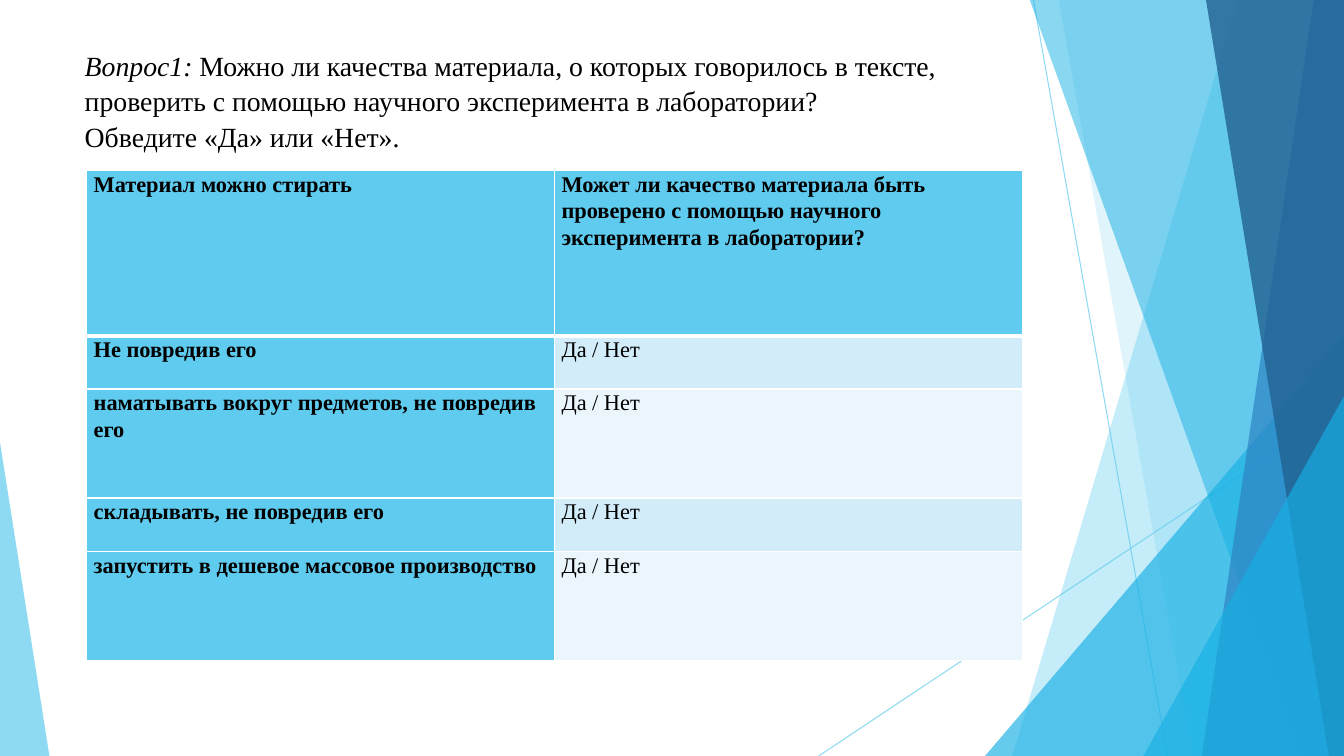
from lxml.etree import SubElement
from pptx import Presentation
from pptx.dml.color import RGBColor
from pptx.enum.shapes import MSO_CONNECTOR as Connector, MSO_SHAPE as Shape
from pptx.enum.text import MSO_ANCHOR as Anchor, MSO_AUTO_SIZE as AutoSize, PP_ALIGN as Align
from pptx.oxml.ns import qn
from pptx.util import Inches, Pt

WHITE = RGBColor(0xFF, 0xFF, 0xFF)
BLACK = RGBColor(0, 0, 0)
SKY = RGBColor(0x5F, 0xCB, 0xEF)
CYAN = RGBColor(0x17, 0xB0, 0xE4)
BLUE = RGBColor(0x2E, 0x83, 0xC3)
NAVY = RGBColor(0x22, 0x62, 0x92)
BAND_DARK = RGBColor(0xD2, 0xEC, 0xF9)
BAND_LIGHT = RGBColor(0xEA, 0xF6, 0xFC)
FONT = "Times New Roman"
WIDTH, HEIGHT = 13.33, 7.5

ANSWER = "Да / Нет"
HEADER = ("Материал можно стирать",
          "Может ли качество материала быть проверено с помощью научного "
          "эксперимента в лаборатории?")
QUALITIES = ("Не повредив его",
             "наматывать вокруг предметов, не повредив его",
             "складывать, не повредив его",
             "запустить в дешевое массовое производство")
ROW_HEIGHTS = (1.64, 0.53, 1.08, 0.53, 1.08)


def add_text(paragraph, text, size=16, bold=False, italic=False, color=BLACK):
    paragraph.alignment = Align.LEFT
    paragraph.line_spacing = 1.07
    paragraph.space_before = Pt(0)
    paragraph.space_after = Pt(8)
    for index, line in enumerate(text.split("\n")):
        if index:
            paragraph.add_line_break()
        run = paragraph.add_run()
        run.text = line
        font = run.font
        font.name, font.size = FONT, Pt(size)
        font.bold, font.italic = bold, italic
        font.color.rgb = color


def set_opacity(fill_or_line, percent):
    color = fill_or_line._xPr.find(qn("a:solidFill"))[0]
    SubElement(color, qn("a:alpha"), val=str(percent * 1000))


def paint(facet, color, opacity):
    facet.shadow.inherit = False
    facet.fill.solid()
    facet.fill.fore_color.rgb = color
    set_opacity(facet.fill, opacity)
    facet.line.fill.background()


def add_ray(slide, start, end):
    ray = slide.shapes.add_connector(Connector.STRAIGHT, *map(Inches, start + end))
    ray.line.width = Pt(0.75)
    ray.line.color.rgb = SKY
    set_opacity(ray.line.fill, 70)
    SubElement(ray._element.spPr, qn("a:effectLst"))


def add_band(slide, top_x, bottom_x, color, opacity):
    """Facet between a slanted left edge and the right side of the slide."""
    top = -0.01
    outline = slide.shapes.build_freeform(Inches(top_x), Inches(top), scale=1.0)
    corners = ((WIDTH, top), (WIDTH, HEIGHT), (bottom_x, HEIGHT))
    outline.add_line_segments([(Inches(x), Inches(y)) for x, y in corners])
    paint(outline.convert_to_shape(), color, opacity)


def add_corner(slide, left, top, width, apex, color, opacity):
    """Triangle standing on the bottom edge of the slide."""
    corner = slide.shapes.add_shape(
        Shape.ISOSCELES_TRIANGLE, Inches(left), Inches(top),
        Inches(width), Inches(HEIGHT - top))
    corner.adjustments[0] = apex
    paint(corner, color, opacity)


def add_facets(slide):
    add_ray(slide, (10.25, 0), (11.58, HEIGHT))
    add_ray(slide, (WIDTH, 4.03), (8.12, HEIGHT))
    add_band(slide, 12.28, 10.04, SKY, 36)
    add_band(slide, 10.5, 11.83, SKY, 20)
    add_corner(slide, 9.77, 3.33, 3.56, 1, CYAN, 66)
    add_band(slide, 10.21, 12.91, CYAN, 50)
    add_band(slide, 13.03, 11.92, BLUE, 70)
    add_band(slide, 11.96, 13.18, NAVY, 80)
    add_corner(slide, 11.34, 3.93, 1.99, 1, CYAN, 66)
    add_corner(slide, 0, 4.39, 0.49, 0, SKY, 70)


def add_question(slide, left, top, width, height):
    title = slide.shapes.title
    title.left, title.top = Inches(left), Inches(top)
    title.width, title.height = Inches(width), Inches(height)
    frame = title.text_frame
    frame.word_wrap = True
    frame.auto_size = AutoSize.NONE
    frame.vertical_anchor = Anchor.TOP
    question = frame.paragraphs[0]
    add_text(question, "Вопрос1: ", size=19.8, italic=True)
    add_text(question, "Можно ли качества материала, о которых говорилось в тексте,\n"
                       "проверить с помощью научного эксперимента в лаборатории?\n"
                       "Обведите «Да» или «Нет».", size=19.8)


def set_borders(cell, top, bottom):
    properties = cell._tc.get_or_add_tcPr()
    for position, (side, points) in enumerate(
            (("lnL", 1), ("lnR", 1), ("lnT", top), ("lnB", bottom))):
        border = properties.makeelement(qn(f"a:{side}"), {"w": str(Pt(points))})
        fill = SubElement(border, qn("a:solidFill"))
        SubElement(fill, qn("a:srgbClr"), val=str(WHITE))
        properties.insert(position, border)


def fill_cell(cell, text, bold, color, top, bottom):
    cell.margin_left = cell.margin_right = Inches(0.07)
    cell.margin_top = cell.margin_bottom = 0
    cell.vertical_anchor = Anchor.TOP
    cell.fill.solid()
    cell.fill.fore_color.rgb = color
    set_borders(cell, top, bottom)
    add_text(cell.text_frame.paragraphs[0], text, bold=bold)


def add_answers(slide, left, top, width):
    rows = [HEADER] + [(quality, ANSWER) for quality in QUALITIES]
    answers = slide.shapes.add_table(
        len(rows), 2, Inches(left), Inches(top),
        Inches(width), Inches(sum(ROW_HEIGHTS))).table
    for column in answers.columns:
        column.width = Inches(width / 2)
    for r, texts in enumerate(rows):
        answers.rows[r].height = Inches(ROW_HEIGHTS[r])
        for c, text in enumerate(texts):
            heading = r == 0 or c == 0
            band = BAND_DARK if r % 2 else BAND_LIGHT
            fill_cell(answers.cell(r, c), text, heading, SKY if heading else band,
                      top=3 if r == 1 else 1, bottom=3 if r == 0 else 1)


def main():
    deck = Presentation()
    deck.slide_width, deck.slide_height = Inches(WIDTH), Inches(HEIGHT)
    slide = deck.slides.add_slide(deck.slide_layouts[5])
    slide.background.fill.solid()
    slide.background.fill.fore_color.rgb = WHITE
    add_facets(slide)
    add_question(slide, 0.74, 0.41, 9.4, 1.27)
    add_answers(slide, 0.86, 1.69, 9.28)
    deck.save("out.pptx")


if __name__ == "__main__":
    main()
